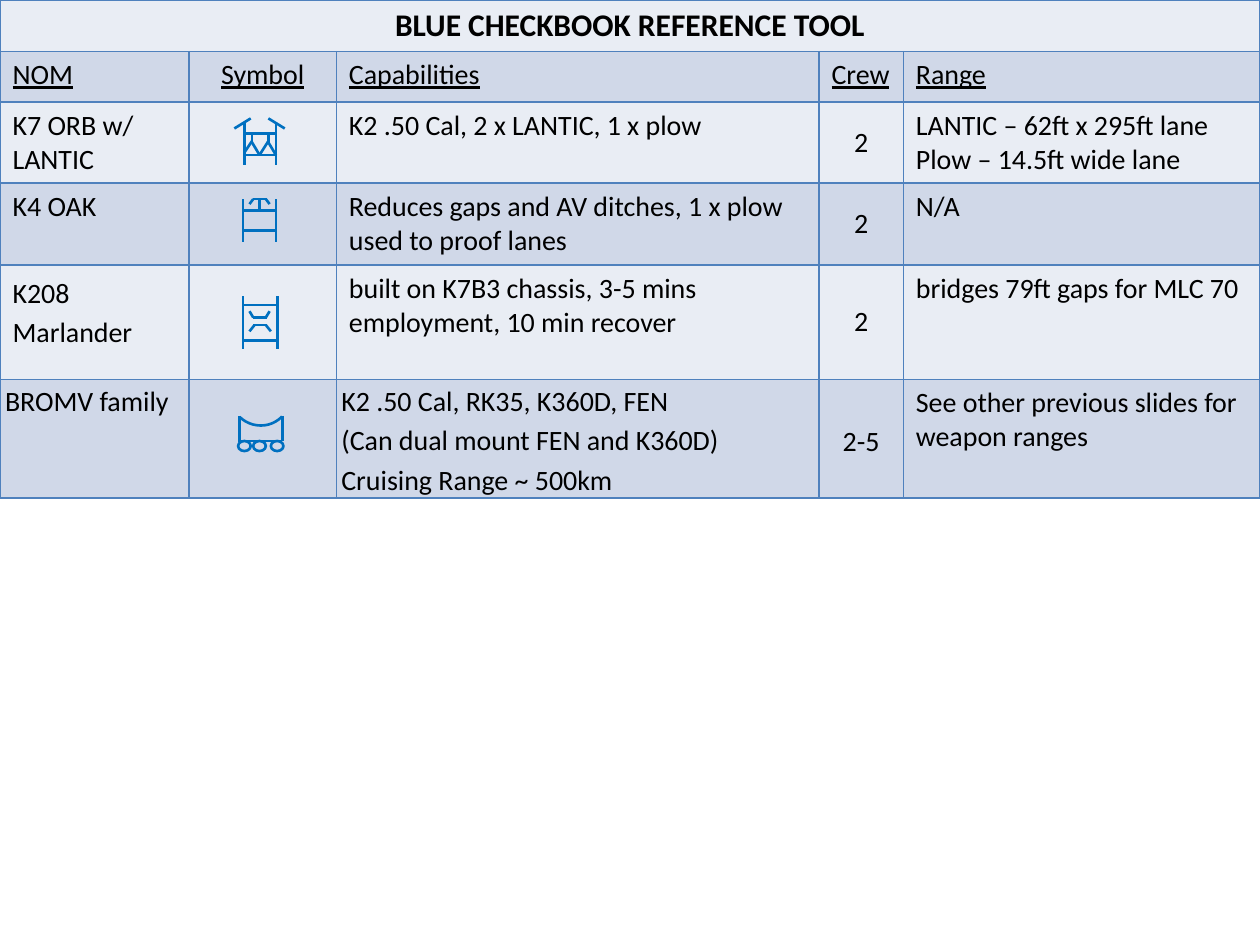
from lxml.etree import SubElement
from pptx import Presentation
from pptx.dml.color import RGBColor
from pptx.enum.shapes import MSO_CONNECTOR, MSO_SHAPE
from pptx.enum.text import MSO_ANCHOR, PP_ALIGN
from pptx.oxml import parse_xml
from pptx.oxml.ns import nsdecls, qn
from pptx.util import Inches, Pt

BLACK = RGBColor(0x00, 0x00, 0x00)
PALE = RGBColor(0xE9, 0xED, 0xF4)
BAND = RGBColor(0xD0, 0xD8, 0xE8)
EDGE = RGBColor(0x4F, 0x81, 0xBD)
INK = RGBColor(0x00, 0x70, 0xC0)

deck = Presentation()
deck.slide_width = Inches(10)
deck.slide_height = Inches(7.5)
slide = deck.slides.add_slide(deck.slide_layouts[6])

rows = [
    ["BLUE CHECKBOOK REFERENCE TOOL", "", "", "", ""],
    ["NOM", "Symbol", "Capabilities", "Crew", "Range"],
    ["K7 ORB w/ LANTIC", "", "K2 .50 Cal, 2 x LANTIC, 1 x plow", "2",
     "LANTIC – 62ft x 295ft lane\nPlow – 14.5ft wide lane"],
    ["K4 OAK", "", "Reduces gaps and AV ditches, 1 x plow used to proof lanes",
     "2", "N/A"],
    ["K208\nMarlander", "",
     "built on K7B3 chassis, 3-5 mins employment, 10 min recover", "2",
     "bridges 79ft gaps for MLC 70"],
    ["BROMV family", "",
     "K2 .50 Cal, RK35, K360D, FEN\n(Can dual mount FEN and K360D)\n"
     "Cruising Range ~ 500km", "2-5",
     "See other previous slides for weapon ranges"],
]
widths = [1.5, 1.17, 3.83, 0.67, 2.83]
heights = [0.41, 0.4, 0.64, 0.65, 0.91, 0.94]
loose = {(4, 0), (5, 0), (5, 2), (5, 3)}
tight = {
    "margin_left": Inches(0.04), "margin_right": Inches(0.04),
    "margin_top": 0, "margin_bottom": 0,
}

table = slide.shapes.add_table(
    len(rows), len(widths), 0, 0, Inches(sum(widths)), Inches(sum(heights))
).table
table.first_row = False
table.horz_banding = False
for col, width in zip(table.columns, widths):
    col.width = Inches(width)
for row, height in zip(table.rows, heights):
    row.height = Inches(height)

for r, texts in enumerate(rows):
    style = {
        "name": "Calibri", "size": Pt(16 if r else 18),
        "bold": r == 0, "underline": r == 1,
    }
    for c, text in enumerate(texts):
        cell = table.cell(r, c)
        cell.text = text
        cell.fill.solid()
        cell.fill.fore_color.rgb = BAND if r % 2 else PALE
        if r > 1 and c == 3:
            cell.vertical_anchor = MSO_ANCHOR.MIDDLE
        if r == 5 and (r, c) in loose:
            for key, value in tight.items():
                setattr(cell, key, value)
        for para in cell.text_frame.paragraphs:
            if r == 0 or (r, c) == (1, 1) or (r > 1 and c == 3):
                para.alignment = PP_ALIGN.CENTER
            if (r, c) in loose:
                para.line_spacing = 1.15
            for run in para.runs:
                for key, value in style.items():
                    setattr(run.font, key, value)
                run.font.color.rgb = BLACK
        props = cell._tc.get_or_add_tcPr()
        for spot, side in enumerate("LRTB"):
            props.insert(spot, parse_xml(
                f'<a:ln{side} {nsdecls("a")} w="{Pt(1)}"><a:solidFill>'
                f'<a:srgbClr val="{EDGE}"/></a:solidFill></a:ln{side}>'))
table.cell(0, 0).merge(table.cell(0, 4))

signs = [
    [(1.94, 0.97, 1.94, 1.31), (2.19, 0.97, 2.19, 1.31),
     (2.19, 1.23, 1.94, 1.23), (2.19, 1.06, 1.94, 1.06),
     (2, 1.06, 2, 1.14), (1.99, 0.94, 1.86, 1.02),
     (2.13, 0.94, 2.26, 1.02), (2, 1.12, 1.94, 1.21),
     (2, 1.13, 2.06, 1.23), (2.13, 1.12, 2.06, 1.23),
     (2.13, 1.13, 2.19, 1.23), (2.13, 1.06, 2.13, 1.14)],
    [(1.93, 1.58, 1.93, 1.92), (2.19, 1.58, 2.19, 1.92),
     (2.19, 1.83, 1.94, 1.83), (2.19, 1.67, 1.94, 1.67),
     (2.06, 1.66, 2.06, 1.58), (2.12, 1.58, 2.01, 1.58),
     (2.01, 1.58, 1.98, 1.62), (2.14, 1.62, 2.11, 1.58)],
    [(1.93, 2.35, 1.93, 2.77), (2.2, 2.35, 2.2, 2.77),
     (2.19, 2.7, 1.93, 2.7), (2.19, 2.42, 1.94, 2.42),
     (2.12, 2.58, 2.01, 2.58), (2.02, 2.58, 1.98, 2.63),
     (2.15, 2.63, 2.11, 2.58), (2.01, 2.52, 2.12, 2.52),
     (2.11, 2.52, 2.14, 2.47), (1.98, 2.47, 2.01, 2.52)],
    [(1.89, 3.5, 2.24, 3.5), (2.24, 3.3, 2.24, 3.5),
     (1.9, 3.3, 1.9, 3.51)],
]
for sign in signs:
    group = slide.shapes.add_group_shape()
    for ends in sign:
        line = group.shapes.add_connector(
            MSO_CONNECTOR.STRAIGHT, *[Inches(v) for v in ends])
        line.line.color.rgb = INK
        line.line.width = Pt(1.5)
        SubElement(line._element.spPr, qn("a:effectLst"))

parts = [
    (MSO_SHAPE.ARC, 1.83, 2.9, 0.47, 0.48, 133.8),
    (MSO_SHAPE.OVAL, 1.89, 3.5, 0.1, 0.08, 0),
    (MSO_SHAPE.OVAL, 2.01, 3.5, 0.1, 0.08, 0),
    (MSO_SHAPE.OVAL, 2.15, 3.5, 0.1, 0.08, 0),
]
for kind, *box, turn in parts:
    part = group.shapes.add_shape(kind, *[Inches(v) for v in box])
    part.rotation = turn
    part.shadow.inherit = False
    part.fill.background()
    part.line.color.rgb = INK
    part.line.width = Pt(1.5)

deck.save("out.pptx")
